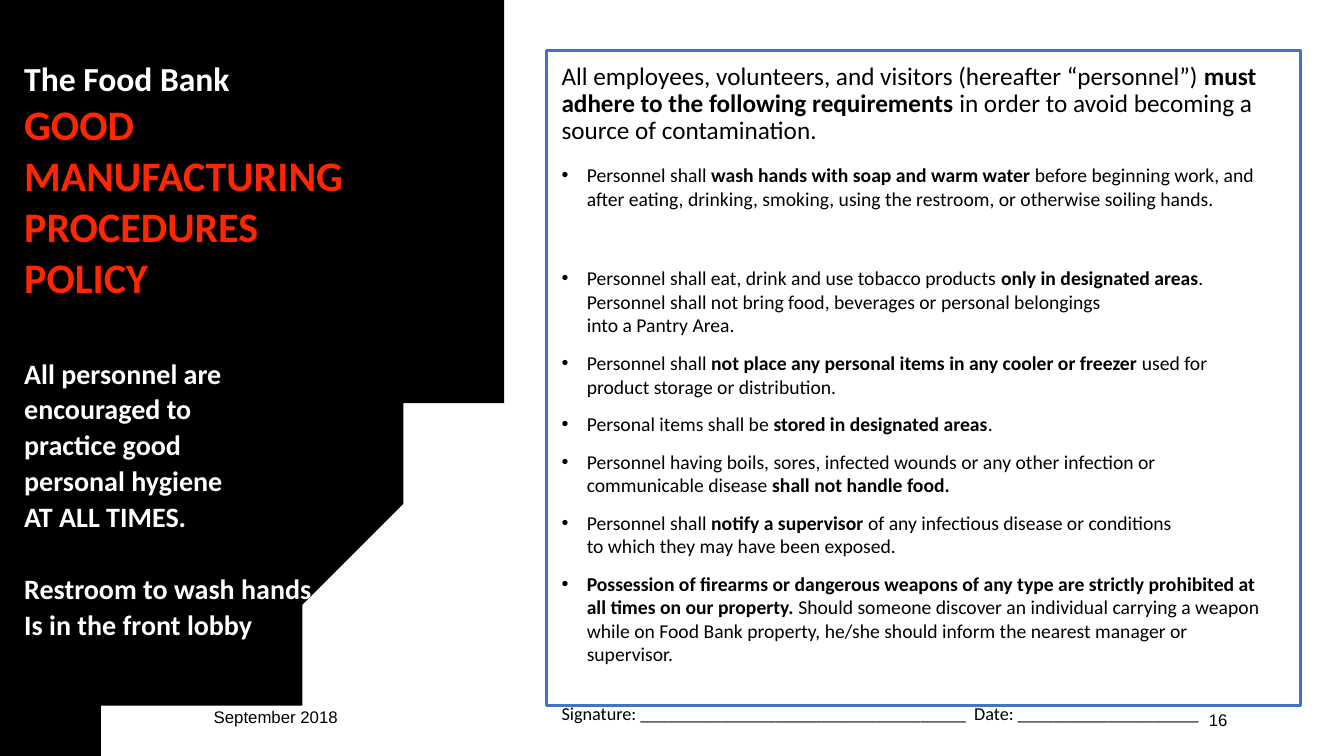
from lxml import etree
from pptx import Presentation
from pptx.dml.color import RGBColor
from pptx.enum import shapes, text
from pptx.oxml import ns
from pptx.util import Inches, Pt

COLORS = {"black": "000000", "white": "FFFFFF", "red": "FF2600", "blue": "4472C4"}

POLICY_TITLE = ["GOOD", "MANUFACTURING", "PROCEDURES", "POLICY"]
HYGIENE = ["All personnel are", "encouraged to", "practice good", "personal hygiene", "AT ALL TIMES."]
RESTROOM = ["Restroom to wash hands", "Is in the front lobby"]

INTRO = (
    "All employees, volunteers, and visitors (hereafter “personnel”) "
    "**must adhere to the following requirements** in order to avoid becoming a source of contamination."
)
REQUIREMENTS = [
    ("Personnel shall **wash hands with soap and warm water** before beginning work, and after eating, "
     "drinking, smoking, using the restroom, or otherwise soiling hands.", 13),
    ("Personnel shall eat, drink and use tobacco products **only in designated areas**. "
     "Personnel shall not bring food, beverages or personal belongings \ninto a Pantry Area.", 40),
    ("Personnel shall **not place any personal items in any cooler or freezer** used for "
     "product storage or distribution.", 10),
    ("Personal items shall be **stored in designated areas**.", 10),
    ("Personnel having boils, sores, infected wounds or any other infection or communicable disease "
     "**shall not handle food.**", 10),
    ("Personnel shall **notify a supervisor **of any infectious disease or conditions \n"
     "to which they may have been exposed.", 10),
    ("**Possession of firearms or dangerous weapons of any type are strictly prohibited at all times "
     "on our property. **Should someone discover an individual carrying a weapon while on Food Bank "
     "property, he/she should inform the nearest manager or supervisor.", 10),
]
SIGNATURE = "Signature: " + "_" * 36 + "  Date: " + "_" * 20
DATE, PAGE = "September 2018", "16"

ARC_START = (5, 0)
ARC_CURVES = [
    ((5.04, 0.29), (5.07, 0.54), (5.09, 0.8), (5.09, 1.05)),
    ((5.09, 1.05), (5.09, 3.75), (3.53, 6.11), (1.21, 7.42)),
]
ARC_END = [(1.05, 7.5), (-0.15, 7.5), (-0.15, 0)]
CURVE_STEPS = 40


def color(name):
    return RGBColor.from_string(COLORS[name])


def curve_points(curve):
    for step in range(CURVE_STEPS + 1):
        t = step / CURVE_STEPS
        weights = ((1 - t) ** 3, 3 * t * (1 - t) ** 2, 3 * t * t * (1 - t), t ** 3)
        yield tuple(sum(w * point[axis] for w, point in zip(weights, curve)) for axis in (0, 1))


def add_frame(slide, left, top, width, height, wrap=True):
    frame = slide.shapes.add_textbox(*map(Inches, (left, top, width, height))).text_frame
    frame.margin_left = frame.margin_right = frame.margin_top = frame.margin_bottom = Inches(0.05)
    frame.word_wrap = wrap
    frame.auto_size = text.MSO_AUTO_SIZE.SHAPE_TO_FIT_TEXT
    return frame


def write(frame, words, size, fill="black", font="Calibri", before=0, spacing=1.0, bold=False):
    first = frame.paragraphs[0]
    paragraph = frame.add_paragraph() if first.runs else first
    paragraph.space_before, paragraph.line_spacing = Pt(before), spacing
    for index, part in enumerate(words.split("**")):
        for row, line in enumerate(part.split("\n")):
            if row:
                paragraph.add_line_break()
            if line:
                run = paragraph.add_run()
                run.text = line
                run.font.name, run.font.size = font, Pt(size)
                run.font.bold = bold or index % 2 == 1
                run.font.color.rgb = color(fill)
    return paragraph


def add_bullet(paragraph):
    properties = paragraph._p.get_or_add_pPr()
    properties.set("marL", str(Inches(0.25)))
    properties.set("indent", str(-Inches(0.25)))
    etree.SubElement(properties, ns.qn("a:buFont")).set("typeface", "Arial")
    etree.SubElement(properties, ns.qn("a:buChar")).set("char", "•")


def main():
    deck = Presentation()
    deck.slide_width, deck.slide_height = Inches(13.33), Inches(7.5)
    slide = deck.slides.add_slide(deck.slide_layouts[6])

    border = slide.shapes.add_shape(
        shapes.MSO_SHAPE.RECTANGLE, Inches(5.42), Inches(0.5), Inches(7.48), Inches(6.5))
    border.shadow.inherit = False
    border.fill.solid()
    border.fill.fore_color.rgb = color("white")
    border.line.color.rgb = color("blue")
    border.line.width = Pt(2)

    builder = slide.shapes.build_freeform(*ARC_START, scale=Inches(1))
    outline = [point for curve in ARC_CURVES for point in curve_points(curve)]
    builder.add_line_segments(outline + ARC_END, close=True)
    arc = builder.convert_to_shape()
    arc.shadow.inherit = False
    arc.fill.solid()
    arc.fill.fore_color.rgb = color("black")
    arc.line.fill.background()

    policy = add_frame(slide, 0.19, 0.53, 3.93, 6.65)
    write(policy, "The Food Bank", 24, "white", before=10, bold=True)
    for lines, size, fill, gap in (
            (POLICY_TITLE, 30, "red", 4), (HYGIENE, 20, "white", 41), (RESTROOM, 20, "white", 30)):
        for index, line in enumerate(lines):
            write(policy, line, size, fill, before=4 if index else gap, spacing=0.9, bold=True)

    page = add_frame(slide, 11.94, 7, 0.3, 0.29, wrap=False)
    page.vertical_anchor = text.MSO_ANCHOR.MIDDLE
    write(page, PAGE, 12, font="Arial")
    write(add_frame(slide, 2.07, 6.96, 1.63, 0.29), DATE, 12, font="Arial")

    rules = add_frame(slide, 5.52, 0.58, 7.07, 6.7)
    write(rules, INTRO, 18, before=10, spacing=0.9)
    for requirement, gap in REQUIREMENTS:
        add_bullet(write(rules, requirement, 14, before=gap))
    write(rules, SIGNATURE, 13, before=30, spacing=0.72)

    deck.save("out.pptx")


if __name__ == "__main__":
    main()
